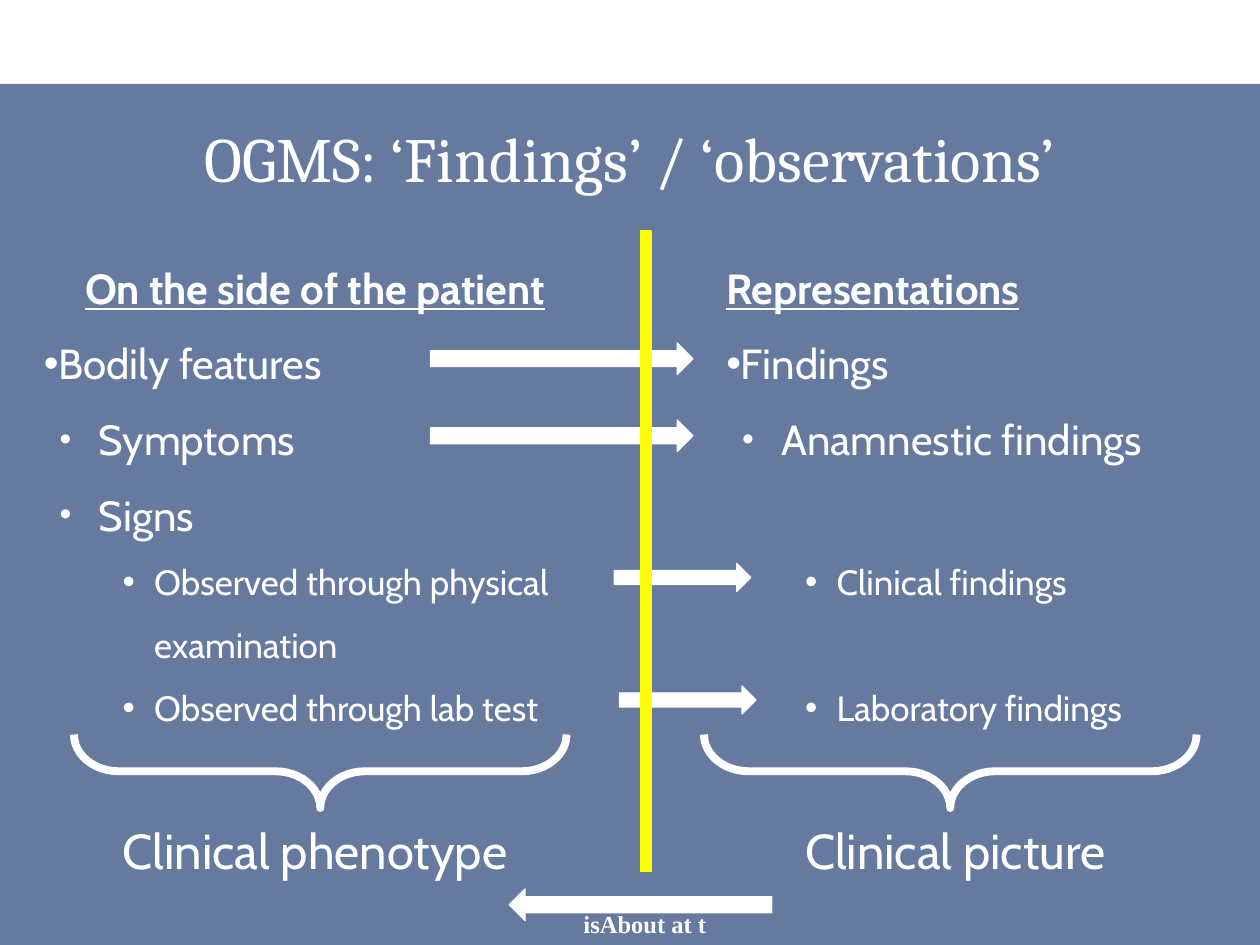
from lxml import etree
from pptx import Presentation
from pptx.dml.color import RGBColor
from pptx.enum.shapes import MSO_SHAPE as Kind
from pptx.enum.text import MSO_ANCHOR, MSO_AUTO_SIZE, PP_ALIGN
from pptx.oxml import ns
from pptx.util import Pt

WHITE, NAVY, YELLOW = "FFFFFF", "002060", "FFFF00"

# Content: (style, text, gap before in points)
TITLE = "OGMS: ‘Findings’ / ‘observations’"
LEFT = [
    ("head", "On the side of the patient", 0),
    ("top", "Bodily features", 0),
    ("sub", "Symptoms", 0),
    ("sub", "Signs", 0),
    ("leaf", "Observed through physical examination", 0),
    ("leaf", "Observed through lab test", 0),
    ("sum", "Clinical phenotype", 36),
]
RIGHT = [
    ("head", "Representations", 0),
    ("top", "Findings", 0),
    ("sub", "Anamnestic findings", 0),
    ("leaf", "Clinical findings", 43),
    ("leaf", "Laboratory findings", 36),
    ("sum", "Clinical picture", 36),
]
LINK = "isAbout at t"

# Style: level, size, left margin, indent, bullet size in percent (0 for none)
STYLES = {
    "head": (0, 24, 0, -27, 0),
    "top": (0, 24, 0, -27, 100),
    "sub": (1, 24, 31.5, -22.5, 80),
    "leaf": (2, 20, 63, -18, 100),
    "sum": (2, 28, 45, 0, 0),
}

# Places: left, top, width, height, turn
ARROWS = [
    (246, 196, 150, 18, 0),
    (246, 240, 150, 18, 0),
    (351, 322, 78, 16, 0),
    (354, 392, 78, 16, 0),
]
BACK = (291, 508, 150, 18, 180)
BRACES = [(x, 300, 42, 281.5, 90) for x in (162, 522)]
BAR = (366, 132, 6, 366, 0)

deck = Presentation()
deck.slide_width, deck.slide_height = Pt(720), Pt(540)
slide = deck.slides.add_slide(deck.slide_layouts[5])
parts = slide.shapes


def color(code):
    return RGBColor.from_string(code)


def draw(kind, place, fill=None, line=None, width=0.75):
    *box, turn = place
    shape = parts.add_shape(kind, *map(Pt, box))
    shape.rotation = turn
    shape.shadow.inherit = False
    if fill:
        shape.fill.solid()
        shape.fill.fore_color.rgb = color(fill)
    else:
        shape.fill.background()
    if line:
        shape.line.color.rgb = color(line)
        shape.line.width = Pt(width)
    else:
        shape.line.fill.background()
    return shape


def style(para, size, face, bold=False):
    font = para.font
    font.size, font.name, font.bold = Pt(size), face, bold
    font.color.rgb = color(WHITE)


def add(parent, tag, **attrs):
    node = etree.SubElement(parent, ns.qn(tag))
    for key, value in attrs.items():
        node.set(key, str(value))
    return node


def outline(left, width, rows):
    frame = parts.add_textbox(Pt(left), Pt(132), Pt(width), Pt(390)).text_frame
    frame.word_wrap = True
    for i, (name, words, gap) in enumerate(rows):
        level, size, margin, indent, bullet = STYLES[name]
        para = frame.add_paragraph() if i else frame.paragraphs[0]
        para.text, para.level = words, level
        props = para._p.get_or_add_pPr()
        props.set("marL", str(Pt(margin)))
        props.set("indent", str(Pt(indent)))
        if bullet:
            add(add(props, "a:buClr"), "a:srgbClr", val=WHITE)
            add(props, "a:buSzPct", val=bullet * 1000)
            add(props, "a:buFont", typeface="Arial")
            add(props, "a:buChar", char="•")
        else:
            add(props, "a:buNone")
        para.line_spacing = 1.5
        para.space_before = Pt(gap)
        style(para, size, "Cabin", name == "head")
        para.font.underline = name == "head"
    return frame


# Backdrop, behind everything
band = draw(Kind.RECTANGLE, (0, 48, 720, 492, 0), NAVY)
tint = band.fill._xPr.find(".//" + ns.qn("a:srgbClr"))
add(tint, "a:alpha", val=60000)
parts._spTree.insert(2, band._element)

# Title
title = parts.title
title.left, title.top, title.width, title.height = map(Pt, (18, 60, 684, 60))
title.text_frame.text = TITLE
title.text_frame.vertical_anchor = MSO_ANCHOR.MIDDLE
head = title.text_frame.paragraphs[0]
head.alignment = PP_ALIGN.CENTER
style(head, 36, "Cambria")

# Two columns
outline(18, 324, LEFT).paragraphs[0].alignment = PP_ALIGN.CENTER
outline(408, 294, RIGHT)

# Arrows, braces and divider
for place in ARROWS:
    draw(Kind.RIGHT_ARROW, place, WHITE, WHITE)
for place in BRACES:
    brace = draw(Kind.RIGHT_BRACE, place, None, WHITE, 4.5)
    brace.adjustments[0], brace.adjustments[1] = 0.61, 0.5
draw(Kind.RECTANGLE, BAR, YELLOW, YELLOW)
draw(Kind.RIGHT_ARROW, BACK, WHITE, WHITE)

# Label of the return arrow
label = parts.add_textbox(Pt(326), Pt(516), Pt(85), Pt(24.5)).text_frame
label.word_wrap = False
label.auto_size = MSO_AUTO_SIZE.SHAPE_TO_FIT_TEXT
label.text = LINK
label.paragraphs[0].alignment = PP_ALIGN.CENTER
style(label.paragraphs[0], 14, "Times New Roman", True)

deck.save("out.pptx")
